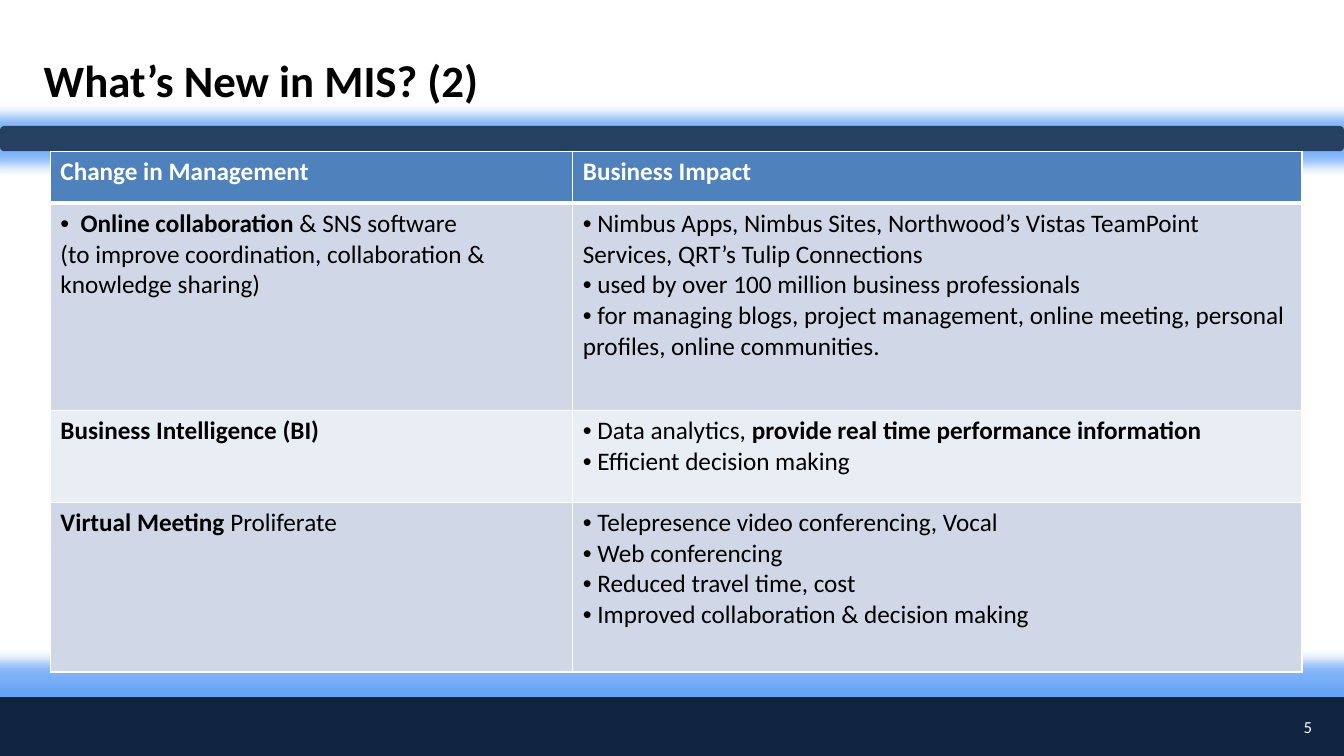
from pptx import Presentation
from pptx.dml.color import RGBColor
from pptx.enum.shapes import MSO_SHAPE
from pptx.enum.text import MSO_ANCHOR, PP_ALIGN
from pptx.oxml import parse_xml
from pptx.oxml.ns import nsdecls, qn
from pptx.util import Inches, Pt

THEME = {
    "font": "Calibri",
    "title": {"size": Pt(32), "bold": True, "color": "000000"},
    "header": {"size": Pt(18), "bold": True, "color": "FFFFFF"},
    "body": {"size": Pt(18), "bold": False, "color": "000000"},
    "number": {"size": Pt(12), "bold": False, "color": "FFFFFF"},
    "header_fill": "4F81BD",
    "band_fills": ["E9EDF4", "D0D8E8"],
    "footer_bar": "0F243E",
    "title_bar": "254061",
    "glow": "60A0F5",
    "border": "FFFFFF",
}

# The slide is a grid of 160 columns by 90 rows.
UNIT = Inches(7.5) / 90
COLS = [62.2, 86.8]
ROWS = [6.2, 24.7, 10.9, 20.2]

# ** switches bold on and off; a leading • makes a bulleted paragraph.
CELLS = [
    [["Change in Management"], ["Business Impact"]],
    [["•**Online collaboration** & SNS software",
      "(to improve coordination, collaboration & knowledge sharing)"],
     ["• Nimbus Apps, Nimbus Sites, Northwood’s Vistas TeamPoint Services, "
      "QRT’s Tulip Connections",
      "• used by over 100 million business professionals",
      "• for managing blogs, project management, online meeting, personal "
      "profiles, online communities."]],
    [["**Business Intelligence (BI)**"],
     ["• Data analytics, **provide real time performance information**",
      "• Efficient decision making"]],
    [["**Virtual Meeting **Proliferate"],
     ["• Telepresence video conferencing, Vocal",
      "• Web conferencing",
      "• Reduced travel time, cost",
      "• Improved collaboration & decision making"]],
]


def grid(*units):
    return [round(u * UNIT) for u in units]


def add_text(p, text, style):
    """Add the text to paragraph p, with every second ** part in bold."""
    for i, part in enumerate(text.split("**")):
        if part:
            r = p.add_run()
            r.text = part
            fmt = {"name": THEME["font"], "size": style["size"],
                   "bold": style["bold"] or i % 2 == 1}
            for key, value in fmt.items():
                setattr(r.font, key, value)
            r.font.color.rgb = RGBColor.from_string(style["color"])


prs = Presentation()
prs.slide_width, prs.slide_height = grid(160, 90)
s = prs.slides.add_slide(prs.slide_layouts[5])

# Glowing bars
for kind, box, color in [
    (MSO_SHAPE.RECTANGLE, (0, 83, 160, 7), THEME["footer_bar"]),
    (MSO_SHAPE.ROUNDED_RECTANGLE, (0, 15, 160, 3), THEME["title_bar"]),
]:
    sp = s.shapes.add_shape(kind, *grid(*box))
    sp.fill.solid()
    sp.fill.fore_color.rgb = RGBColor.from_string(color)
    sp.line.fill.background()
    sp.shadow.inherit = False
    sp._element.spPr.find(qn("a:effectLst")).append(parse_xml(
        f'<a:glow {nsdecls("a")} rad="{Pt(18)}"><a:srgbClr val="{THEME["glow"]}">'
        '<a:alpha val="80000"/></a:srgbClr></a:glow>'))

# Table
table = s.shapes.add_table(len(ROWS), len(COLS), *grid(6, 18, 149, 62)).table
for column, width in zip(table.columns, grid(*COLS)):
    column.width = width
for row, height in zip(table.rows, grid(*ROWS)):
    row.height = height

for i, row in enumerate(CELLS):
    style = THEME["body" if i else "header"]
    fill = THEME["band_fills"][i % 2] if i else THEME["header_fill"]
    for j, paragraphs in enumerate(row):
        cell = table.cell(i, j)
        for side in "LRTB":
            heavy = (i, side) in [(0, "B"), (1, "T")]
            cell._tc.get_or_add_tcPr().append(parse_xml(
                f'<a:ln{side} {nsdecls("a")} w="{Pt(3 if heavy else 1)}"><a:solidFill>'
                f'<a:srgbClr val="{THEME["border"]}"/></a:solidFill></a:ln{side}>'))
        cell.fill.solid()
        cell.fill.fore_color.rgb = RGBColor.from_string(fill)
        tf = cell.text_frame
        for k, text in enumerate(paragraphs):
            p = tf.paragraphs[0] if k == 0 else tf.add_paragraph()
            if text.startswith("•"):
                text = text[1:]
                hang = 0 if text.startswith(" ") else Inches(0.2)
                pPr = p._p.get_or_add_pPr()
                pPr.set("marL", str(hang))
                pPr.set("indent", str(-hang))
                pPr.append(parse_xml(f'<a:buFont {nsdecls("a")} typeface="Arial"/>'))
                pPr.append(parse_xml(f'<a:buChar {nsdecls("a")} char="•"/>'))
            add_text(p, text, style)

# Title and slide number
title = s.shapes.title
title.left, title.top, title.width, title.height = grid(4, 5, 138.7, 9)
number = s.shapes.add_textbox(*grid(150.7, 84, 6.7, 5))
for sp, text, name, align in [
    (title, "What’s New in MIS? (2)", "title", PP_ALIGN.LEFT),
    (number, "5", "number", PP_ALIGN.RIGHT),
]:
    tf = sp.text_frame
    tf.word_wrap = True
    tf.vertical_anchor = MSO_ANCHOR.MIDDLE
    p = tf.paragraphs[0]
    p.alignment = align
    add_text(p, text, THEME[name])

prs.save("out.pptx")
